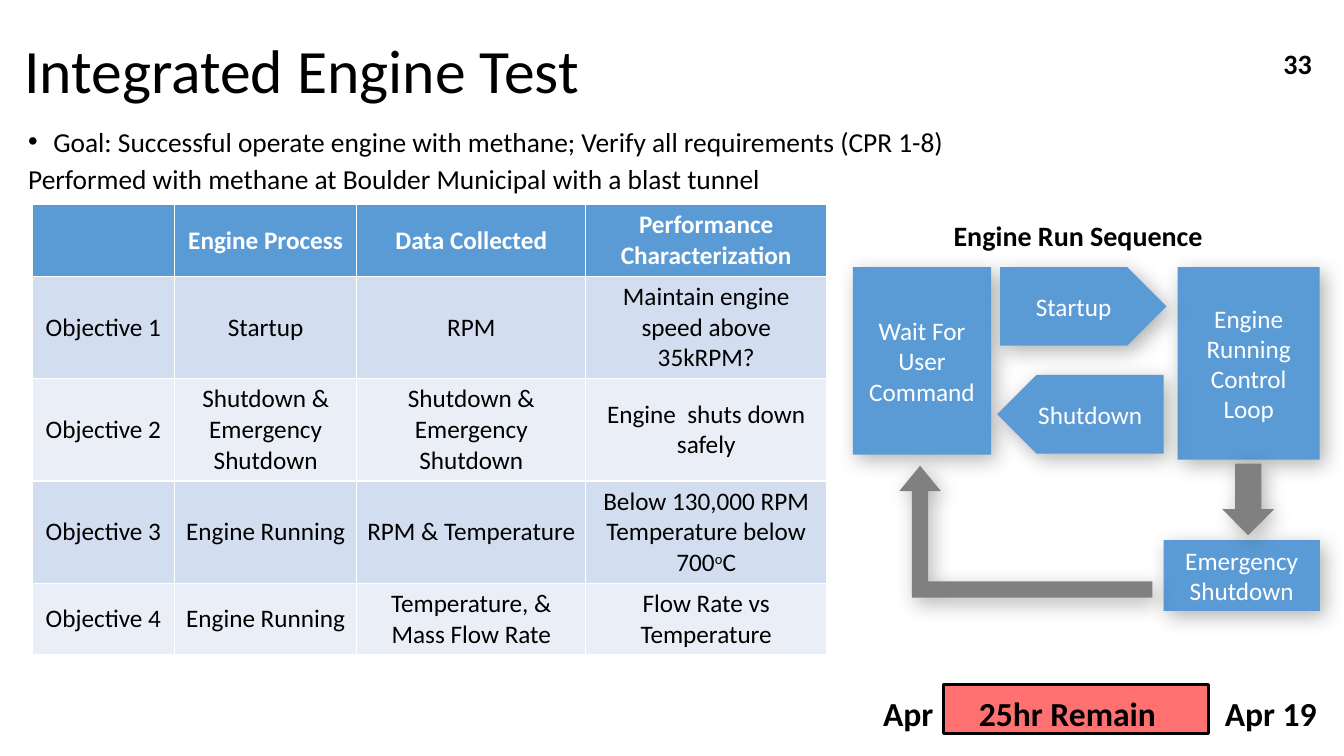
from dataclasses import dataclass

from lxml import etree
from pptx import Presentation
from pptx.dml.color import RGBColor
from pptx.enum.shapes import MSO_SHAPE as Shape
from pptx.enum.text import MSO_ANCHOR as Anchor, MSO_AUTO_SIZE as AutoSize, PP_ALIGN as Align
from pptx.oxml import parse_xml
from pptx.oxml.ns import nsdecls, qn
from pptx.util import Inches, Pt


@dataclass(frozen=True)
class Theme:
    font: str = "Calibri"
    black: RGBColor = RGBColor(0x00, 0x00, 0x00)
    white: RGBColor = RGBColor(0xFF, 0xFF, 0xFF)
    blue: RGBColor = RGBColor(0x5B, 0x9B, 0xD5)
    bands: tuple = (RGBColor(0xD2, 0xDE, 0xEF), RGBColor(0xEA, 0xEF, 0xF7))
    gray: RGBColor = RGBColor(0x80, 0x80, 0x80)
    red: RGBColor = RGBColor(0xFF, 0x71, 0x71)
    title: Pt = Pt(44)
    dates: Pt = Pt(24)
    heading: Pt = Pt(20)
    body: Pt = Pt(19.6)
    label: Pt = Pt(18)


theme = Theme()
SHADOW = f"""<a:effectLst {nsdecls("a")}>
  <a:outerShdw blurRad="190500" dist="63500" dir="3000000" algn="tl" rotWithShape="0">
    <a:srgbClr val="000000"><a:alpha val="30000"/></a:srgbClr>
  </a:outerShdw>
</a:effectLst>"""


def format_text(frame, size, color=theme.black, bold=False, align=Align.LEFT):
    for paragraph in frame.paragraphs:
        paragraph.alignment = align
        for run in paragraph.runs:
            run.font.name = theme.font
            run.font.size = size
            run.font.bold = bold
            run.font.color.rgb = color


def place(shape, left, top, width, height):
    shape.left, shape.top = Inches(left), Inches(top)
    shape.width, shape.height = Inches(width), Inches(height)


prs = Presentation()
prs.slide_width, prs.slide_height = Inches(13.33), Inches(7.5)
slide = prs.slides.add_slide(prs.slide_layouts[1])

title = slide.shapes.title
place(title, 0.14, 0, 12.14, 1.45)
title.text_frame.text = "Integrated Engine Test"
title.text_frame.vertical_anchor = Anchor.MIDDLE
title.text_frame.auto_size = AutoSize.NONE
title.text_frame.paragraphs[0].line_spacing = 0.9
format_text(title.text_frame, theme.title)

goals = slide.placeholders[1]
place(goals, 0.18, 1.28, 11.5, 0.75)
goals.text_frame.text = (
    "Goal: Successful operate engine with methane; Verify all requirements (CPR 1-8)\n"
    "Performed with methane at Boulder Municipal with a blast tunnel"
)
goals.text_frame.auto_size = AutoSize.NONE
goal, venue = goals.text_frame.paragraphs
for paragraph, margin, bullet, gap in ((goal, 0.25, "•", 0), (venue, 0, None, 10)):
    paragraph.line_spacing = 0.7
    paragraph.space_before = Pt(gap)
    props = paragraph._p.get_or_add_pPr()
    props.set("marL", str(Inches(margin)))
    props.set("indent", str(-Inches(margin)))
    if bullet:
        etree.SubElement(props, qn("a:buChar")).set("char", bullet)
    else:
        etree.SubElement(props, qn("a:buNone"))
format_text(goals.text_frame, theme.body)

objectives = [
    ["", "Engine Process", "Data Collected", "Performance Characterization"],
    ["Objective 1", "Startup", "RPM", "Maintain engine speed above 35kRPM?"],
    ["Objective 2", "Shutdown & Emergency Shutdown", "Shutdown & Emergency Shutdown",
     "Engine  shuts down safely"],
    ["Objective 3", "Engine Running", "RPM & Temperature",
     "Below 130,000 RPM\nTemperature below 700"],
    ["Objective 4", "Engine Running", "Temperature, & Mass Flow Rate",
     "Flow Rate vs Temperature"],
]
column_widths = [1.41, 1.81, 2.27, 2.39]
row_heights = [0.71, 1.01, 1.01, 1.01, 0.71]
table = slide.shapes.add_table(
    len(row_heights), len(column_widths), Inches(0.32), Inches(2.03),
    Inches(sum(column_widths)), Inches(sum(row_heights)),
).table
for column, width in zip(table.columns, column_widths):
    column.width = Inches(width)
for r, (entries, height) in enumerate(zip(objectives, row_heights)):
    table.rows[r].height = Inches(height)
    is_header = r == 0
    for c, entry in enumerate(entries):
        cell = table.cell(r, c)
        cell.text_frame.text = entry
        cell.vertical_anchor = Anchor.MIDDLE
        cell.fill.solid()
        cell.fill.fore_color.rgb = theme.blue if is_header else theme.bands[(r - 1) % 2]
        if entry.endswith("700"):
            for unit, baseline in (("o", "30000"), ("C", "0")):
                unit_run = cell.text_frame.paragraphs[-1].add_run()
                unit_run.text = unit
                unit_run._r.get_or_add_rPr().set("baseline", baseline)
        format_text(cell.text_frame, theme.label,
                    theme.white if is_header else theme.black, is_header, Align.CENTER)

sequence = slide.shapes.add_group_shape()
steps = [
    ("Wait For User Command", Shape.RECTANGLE, (8.46, 2.65, 1.37, 1.86), False),
    ("Engine Running Control Loop", Shape.RECTANGLE, (11.68, 2.65, 1.41, 1.91), False),
    ("Startup", Shape.PENTAGON, (9.92, 2.65, 1.65, 0.78), False),
    ("Emergency Shutdown", Shape.RECTANGLE, (11.54, 5.36, 1.55, 0.7), False),
    ("Shutdown", Shape.PENTAGON, (9.89, 3.72, 1.65, 0.78), True),
    ("", Shape.BENT_UP_ARROW, (8.92, 4.62, 2.51, 1.31), True),
    ("", Shape.DOWN_ARROW, (12.12, 4.6, 0.52, 0.71), False),
]
for label, outline, box, flipped in steps:
    step = sequence.shapes.add_shape(outline, *map(Inches, box))
    step.fill.solid()
    step.fill.fore_color.rgb = theme.blue if label else theme.gray
    step.line.fill.background()
    step._element.spPr.append(parse_xml(SHADOW))
    if flipped:
        step._element.spPr.find(qn("a:xfrm")).set("flipH", "1")
    if outline == Shape.BENT_UP_ARROW:
        for i, ratio in enumerate((0.123, 0.157, 0.192)):
            step.adjustments[i] = ratio
    if label:
        step.text_frame.text = label
        step.text_frame.word_wrap = True
        step.text_frame.vertical_anchor = Anchor.MIDDLE
        format_text(step.text_frame, theme.label, theme.white, align=Align.CENTER)

remaining = slide.shapes.add_shape(
    Shape.RECTANGLE, Inches(9.36), Inches(6.79), Inches(2.63), Inches(0.49))
remaining.shadow.inherit = False
remaining.fill.solid()
remaining.fill.fore_color.rgb = theme.red
remaining.line.color.rgb = theme.black
remaining.line.width = Pt(2.25)

captions = [
    ("Apr\t25hr Remain\tApr 19", (8.66, 6.82, 4.67, 0.55), theme.dates, Align.LEFT, (0.95, 3.39)),
    ("Engine Run Sequence", (9.36, 2.12, 3.53, 0.44), theme.heading, Align.LEFT, ()),
    ("33", (10.11, 0.41, 3, 0.4), theme.heading, Align.RIGHT, ()),
]
for words, box, size, align, tabs in captions:
    caption = slide.shapes.add_textbox(*map(Inches, box)).text_frame
    caption.text = words
    caption.word_wrap = True
    if tabs:
        stops = etree.SubElement(caption.paragraphs[0]._p.get_or_add_pPr(), qn("a:tabLst"))
        for stop in tabs:
            etree.SubElement(stops, qn("a:tab"), pos=str(Inches(stop)), algn="l")
    format_text(caption, size, bold=True, align=align)

prs.save("out.pptx")
